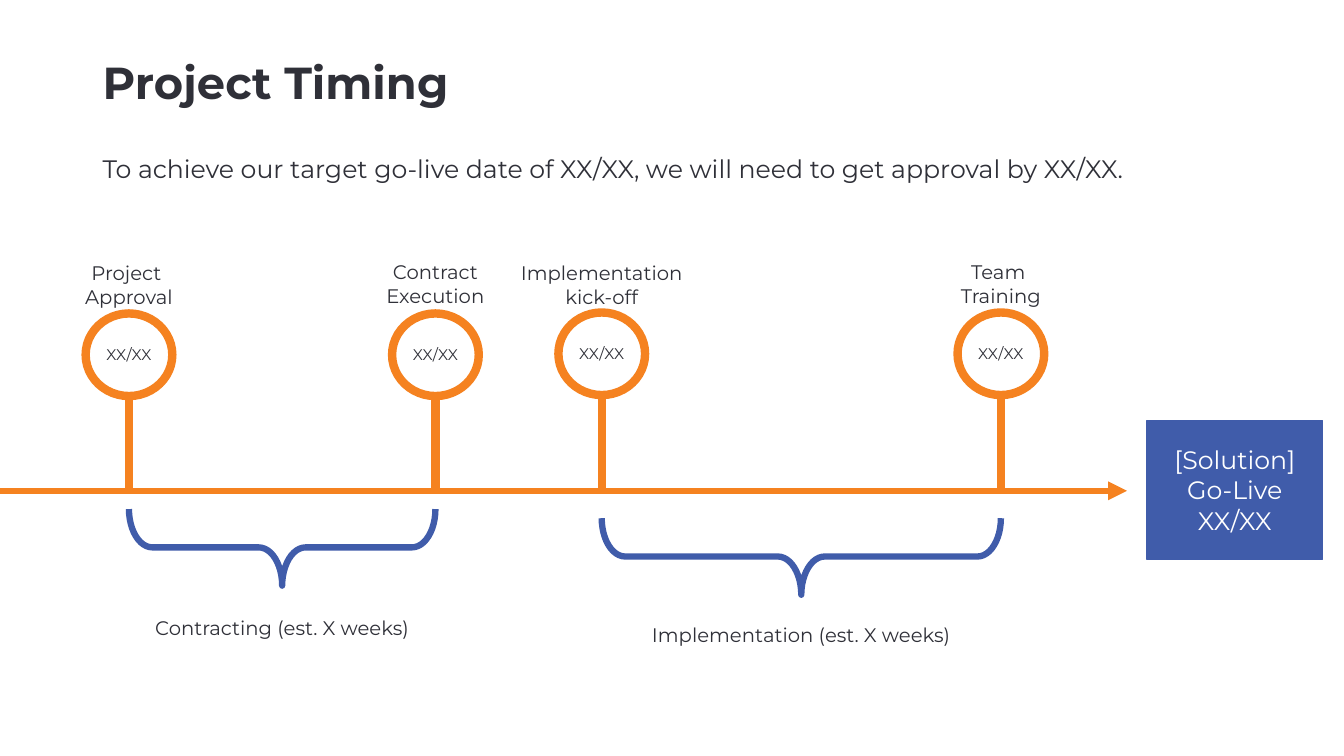
from lxml import etree
from pptx import Presentation
from pptx.dml.color import RGBColor
from pptx.enum.shapes import MSO_CONNECTOR, MSO_SHAPE
from pptx.enum.text import MSO_ANCHOR, MSO_AUTO_SIZE, PP_ALIGN
from pptx.oxml.ns import qn
from pptx.util import Pt

LEFT, CENTER = PP_ALIGN.LEFT, PP_ALIGN.CENTER
MIDDLE = MSO_ANCHOR.MIDDLE
FIT_SHAPE = MSO_AUTO_SIZE.SHAPE_TO_FIT_TEXT
STRAIGHT = MSO_CONNECTOR.STRAIGHT
OVAL, RECTANGLE, BRACE = MSO_SHAPE.OVAL, MSO_SHAPE.RECTANGLE, MSO_SHAPE.LEFT_BRACE

FONT = "Montserrat"
DARK, WHITE, ORANGE, BLUE = "2F3038", "FFFFFF", "F58220", "405CAA"

TITLE = "Project Timing"
SUMMARY = "To achieve our target go-live date of XX/XX, we will need to get approval by XX/XX."
GO_LIVE = "[Solution]\nGo-Live\nXX/XX"
# label, date, centre x, label top, circle top
MILESTONES = [
    ("Project \nApproval", "XX/XX", 92.16, 182.9, 223.9),
    ("Contract Execution", "XX/XX", 311.04, 182.2, 223.9),
    ("Implementation kick-off", "XX/XX", 429.84, 182.9, 223.2),
    ("Team \nTraining", "XX/XX", 714.96, 182.2, 223.2),
]
# caption, first milestone, last milestone, brace centre y, caption top
PHASES = [
    ("Contracting (est. X weeks)", 0, 1, 391, 436.3),
    ("Implementation (est. X weeks)", 2, 3, 397.5, 441.4),
]
AXIS_Y, AXIS_END = 350.6, 805
CIRCLE_WIDTH, CIRCLE_HEIGHT = 61.9, 59
LABEL_WIDTH, LABEL_HEIGHT = 131.8, 41
BRACE_DEPTH, CAPTION_HEIGHT = 54.7, 24.5

presentation = Presentation()
presentation.slide_width, presentation.slide_height = Pt(960), Pt(540)
slide = presentation.slides.add_slide(presentation.slide_layouts[6])


def rgb(color):
    return RGBColor.from_string(color)


def write(shape, text, size, color=DARK, align=CENTER, bold=False):
    frame = shape.text_frame
    frame.word_wrap = True
    frame.text = text
    for paragraph in frame.paragraphs:
        paragraph.alignment = align
        for run in paragraph.runs:
            run.font.name, run.font.size, run.font.bold = FONT, Pt(size), bold
            run.font.color.rgb = rgb(color)
    return frame


def add_text(left, top, width, height, text, size, **style):
    box = slide.shapes.add_textbox(Pt(left), Pt(top), Pt(width), Pt(height))
    frame = write(box, text, size, **style)
    frame.auto_size = FIT_SHAPE
    return frame


def add_shape(kind, left, top, width, height, fill, line, weight):
    shape = slide.shapes.add_shape(kind, Pt(left), Pt(top), Pt(width), Pt(height))
    shape.shadow.inherit = False
    if fill:
        shape.fill.solid()
        shape.fill.fore_color.rgb = rgb(fill)
    else:
        shape.fill.background()
    shape.line.color.rgb = rgb(line)
    shape.line.width = Pt(weight)
    return shape


def add_line(x1, y1, x2, y2, weight, arrow=False):
    line = slide.shapes.add_connector(STRAIGHT, Pt(x1), Pt(y1), Pt(x2), Pt(y2))
    line.line.color.rgb = rgb(ORANGE)
    line.line.width = Pt(weight)
    if arrow:
        outline = line.line._get_or_add_ln()
        etree.SubElement(outline, qn("a:tailEnd"), type="triangle")
    etree.SubElement(line._element.spPr, qn("a:effectLst"))


title = add_text(66.2, 28.8, 828, 64, TITLE, 32, align=LEFT, bold=True)
title.auto_size = MSO_AUTO_SIZE.NONE
title.vertical_anchor = MIDDLE
title.paragraphs[0].line_spacing = 0.9
add_text(66.2, 105.8, 816.5, 29, SUMMARY, 18, align=LEFT)

add_line(0, AXIS_Y, AXIS_END, AXIS_Y, 4.5, arrow=True)
go_live = add_shape(RECTANGLE, 819.4, 300.2, 125.3, 99.4, BLUE, BLUE, 1)
write(go_live, GO_LIVE, 18, WHITE).vertical_anchor = MIDDLE

for label, date, x, label_top, circle_top in MILESTONES:
    add_line(x, circle_top + CIRCLE_HEIGHT, x, AXIS_Y, 6)
    circle = add_shape(OVAL, x - CIRCLE_WIDTH / 2, circle_top,
                       CIRCLE_WIDTH, CIRCLE_HEIGHT, WHITE, ORANGE, 6)
    frame = write(circle, date, 11)
    frame.vertical_anchor = MIDDLE
    frame.margin_left = frame.margin_right = Pt(3.6)
    frame.margin_top = frame.margin_bottom = Pt(3.6)
    add_text(x - LABEL_WIDTH / 2, label_top, LABEL_WIDTH, LABEL_HEIGHT, label, 14)

for caption, first, last, brace_y, caption_top in PHASES:
    start, end = MILESTONES[first][2], MILESTONES[last][2]
    span, middle = end - start, (start + end) / 2
    # The brace is laid out upright, then turned about its centre.
    brace = add_shape(BRACE, middle - BRACE_DEPTH / 2, brace_y - span / 2,
                      BRACE_DEPTH, span, None, BLUE, 4.5)
    brace.adjustments[0], brace.adjustments[1] = 0.306, 0.5
    brace.rotation = 270
    add_text(start, caption_top, span, CAPTION_HEIGHT, caption, 14)

presentation.save("out.pptx")
